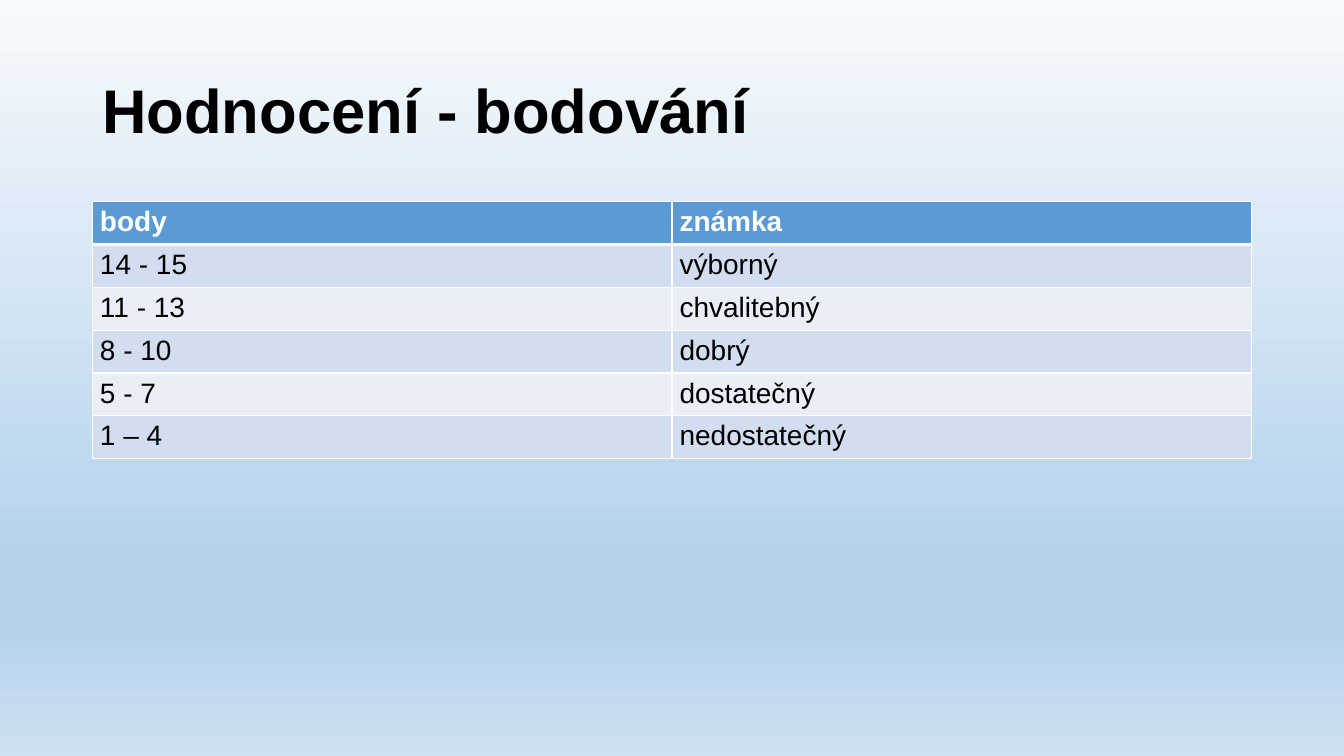
from lxml.etree import SubElement as Sub
from pptx import Presentation
from pptx.dml.color import RGBColor as RGB
from pptx.enum.text import MSO_ANCHOR as Anchor
from pptx.oxml.ns import qn
from pptx.util import Pt

FONT = "Arial"
BLACK, WHITE, BLUE = "000000", "FFFFFF", "5B9BD5"
BANDS = ["D2DEEF", "EAEFF7"]
SKY = [(0, "F7FAFD"), (74, "B5D2EC"), (83, "B5D2EC"), (100, "CEE1F2")]
LEFT, WIDTH = 66, 828
GRADES = [
    ("body", "známka"),
    ("14 - 15", "výborný"),
    ("11 - 13", "chvalitebný"),
    ("8 - 10", "dobrý"),
    ("5 - 7", "dostatečný"),
    ("1 – 4", "nedostatečný"),
]


def color(code):
    return RGB.from_string(code)


def write(frame, text, size=20, tint=BLACK, bold=False, space=1.0):
    para = frame.paragraphs[0]
    para.line_spacing = space
    run = para.add_run()
    run.text = text
    font = run.font
    font.name, font.size, font.bold = FONT, Pt(size), bold
    font.color.rgb = color(tint)


def paint_sky(slide):
    """Fill the background with a vertical gradient of all SKY stops."""
    fill = slide.background.fill
    fill.gradient()
    fill.gradient_angle = 270
    stops = next(slide.element.iter(qn("a:gsLst")))
    stops.clear()
    for place, code in SKY:
        stop = Sub(stops, qn("a:gs"), pos=str(place * 1000))
        Sub(stop, qn("a:srgbClr"), val=code)


def add_title(slide, text):
    box = slide.shapes.add_textbox(Pt(LEFT), Pt(28.75), Pt(WIDTH), Pt(104.4))
    frame = box.text_frame
    frame.word_wrap = True
    frame.vertical_anchor = Anchor.MIDDLE
    write(frame, text, size=44, bold=True, space=0.9)


def add_edges(cell, top=1, bottom=1):
    props = cell._tc.get_or_add_tcPr()
    for side, width in zip("LRTB", (1, 1, top, bottom)):
        line = Sub(props, qn(f"a:ln{side}"), w=str(Pt(width)))
        solid = Sub(line, qn("a:solidFill"))
        Sub(solid, qn("a:srgbClr"), val=WHITE)


def fill_cell(cell, text, row):
    head = row == 0
    add_edges(cell, top=3 if row == 1 else 1, bottom=3 if head else 1)
    cell.fill.solid()
    cell.fill.fore_color.rgb = color(BLUE if head else BANDS[(row - 1) % 2])
    cell.margin_left = cell.margin_right = Pt(5.4)
    cell.margin_top = cell.margin_bottom = Pt(3.3)
    write(cell.text_frame, text, tint=WHITE if head else BLACK, bold=head)


def add_grid(slide, rows, top=144, height=29.6):
    count, cols = len(rows), len(rows[0])
    table = slide.shapes.add_table(
        count, cols, Pt(LEFT), Pt(top), Pt(WIDTH), Pt(count * height)
    ).table
    for row, texts in enumerate(rows):
        table.rows[row].height = Pt(height)
        for col, text in enumerate(texts):
            fill_cell(table.cell(row, col), text, row)


def main():
    deck = Presentation()
    deck.slide_width, deck.slide_height = Pt(960), Pt(540)
    slide = deck.slides.add_slide(deck.slide_layouts[6])
    paint_sky(slide)
    add_title(slide, "Hodnocení - bodování")
    add_grid(slide, GRADES)
    deck.save("out.pptx")


if __name__ == "__main__":
    main()
